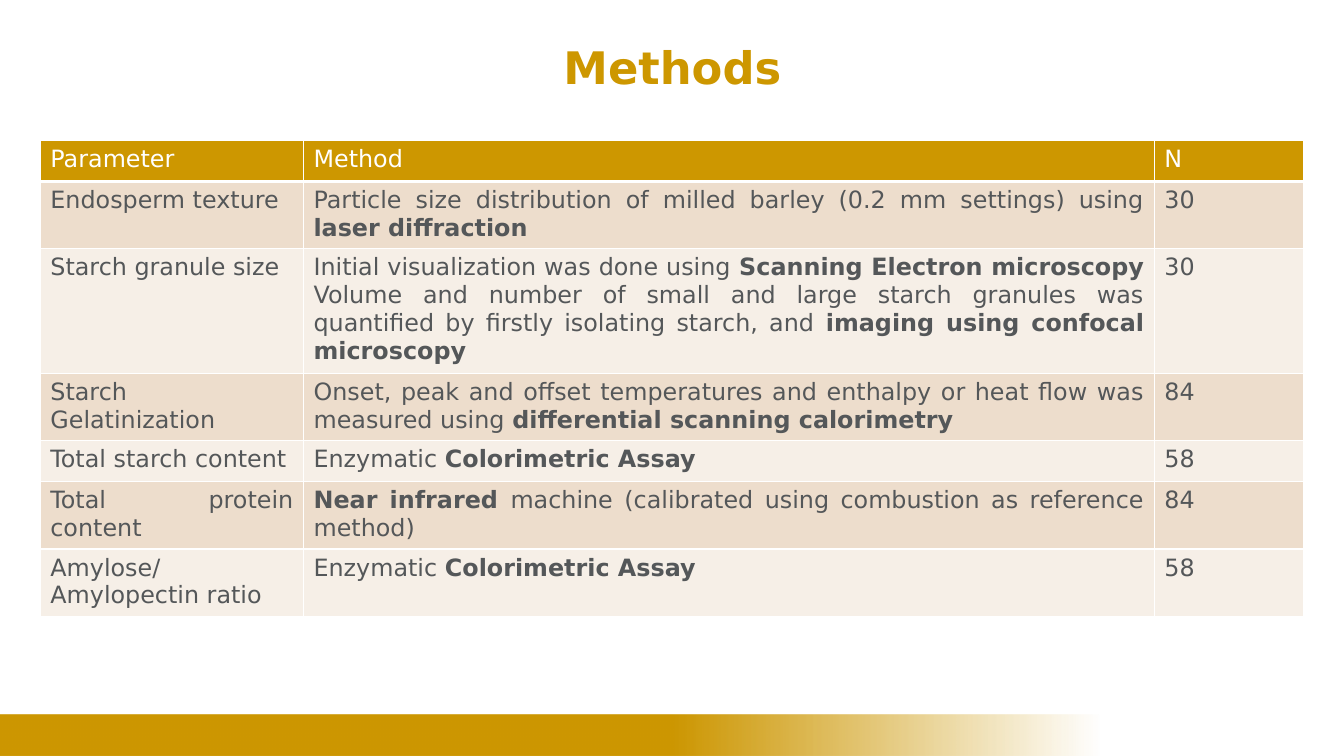
from lxml.etree import SubElement
from pptx import Presentation
from pptx.dml.color import RGBColor
from pptx.enum.shapes import MSO_SHAPE
from pptx.enum.text import MSO_ANCHOR, PP_ALIGN
from pptx.oxml.ns import qn
from pptx.util import Inches, Pt

GOLD = RGBColor(0xCD, 0x97, 0x00)
WHITE = RGBColor(0xFF, 0xFF, 0xFF)
GREY = RGBColor(0x54, 0x57, 0x59)
SAND = RGBColor(0xED, 0xDD, 0xCC)
CREAM = RGBColor(0xF6, 0xEF, 0xE7)
FONT = "DejaVu Sans"

COLUMN_WIDTHS = (2.61, 8.44, 1.48)
ROW_HEIGHT = 0.41
# Asterisks enclose bold words
METHODS = [
    ("Parameter", "Method", "N"),
    ("Endosperm texture",
     "Particle size distribution of milled barley (0.2 mm settings) using "
     "*laser diffraction*", "30"),
    ("Starch granule size",
     "Initial visualization was done using *Scanning Electron microscopy *"
     "Volume and number of small and large starch granules was quantified by "
     "firstly isolating starch, and *imaging using confocal microscopy*", "30"),
    ("Starch Gelatinization",
     "Onset, peak and offset temperatures and enthalpy or heat flow was "
     "measured using *differential scanning calorimetry*", "84"),
    ("Total starch content", "Enzymatic *Colorimetric Assay*", "58"),
    ("Total protein content",
     "*Near infrared *machine (calibrated using combustion as reference method)",
     "84"),
    ("Amylose/Amylopectin ratio", "Enzymatic *Colorimetric Assay*", "58"),
]


def write_text(frame, text, size=17, color=GREY, align=PP_ALIGN.JUSTIFY,
               line_spacing=None):
    """Write one paragraph; words between asterisks are bold."""
    paragraph = frame.paragraphs[0]
    paragraph.alignment = align
    paragraph.line_spacing = line_spacing
    for index, part in enumerate(text.split("*")):
        if part:
            run = paragraph.add_run()
            run.text = part
            run.font.name = FONT
            run.font.size = Pt(size)
            run.font.bold = index % 2 == 1
            run.font.color.rgb = color


def set_borders(cell, bottom_width):
    properties = cell._tc.get_or_add_tcPr()
    widths = {"a:lnL": 1, "a:lnR": 1, "a:lnT": 1, "a:lnB": bottom_width}
    for position, (side, width) in enumerate(widths.items()):
        border = SubElement(properties, qn(side), w=str(Pt(width)))
        fill = SubElement(border, qn("a:solidFill"))
        SubElement(fill, qn("a:srgbClr"), val=str(WHITE))
        properties.insert(position, border)  # borders precede the fill


def add_footer_band(slide, left, top, width, height):
    band = slide.shapes.add_shape(MSO_SHAPE.RECTANGLE, Inches(left), Inches(top),
                                  Inches(width), Inches(height))
    band.shadow.inherit = False
    band.line.fill.background()
    band.fill.gradient()
    band.fill.gradient_angle = 0
    solid, faded = band.fill.gradient_stops
    for stop, position in ((solid, 0.61), (faded, 1)):
        stop.position = position
        stop.color.rgb = GOLD
    # Fade to fully transparent on the right
    faded_color = band._element.spPr.findall(".//" + qn("a:srgbClr"))[-1]
    SubElement(faded_color, qn("a:alpha"), val="0")


def add_title(slide, left, top, width, height):
    title = slide.shapes.add_textbox(Inches(left), Inches(top),
                                     Inches(width), Inches(height))
    title.text_frame.word_wrap = True
    title.text_frame.vertical_anchor = MSO_ANCHOR.TOP
    write_text(title.text_frame, "*Methods*", size=32, color=GOLD,
               align=PP_ALIGN.CENTER, line_spacing=0.9)


def add_methods_table(slide, left, top, width, height):
    holder = slide.shapes.add_table(len(METHODS), len(COLUMN_WIDTHS), Inches(left),
                                    Inches(top), Inches(width), Inches(height))
    table = holder.table
    for column, share in zip(table.columns, COLUMN_WIDTHS):
        column.width = Inches(width * share / sum(COLUMN_WIDTHS))
    for row_number, (row, texts) in enumerate(zip(table.rows, METHODS)):
        row.height = Inches(ROW_HEIGHT)
        is_header = row_number == 0
        row_fill = GOLD if is_header else SAND if row_number % 2 else CREAM
        for cell, text in zip(row.cells, texts):
            cell.fill.solid()
            cell.fill.fore_color.rgb = row_fill
            set_borders(cell, bottom_width=3 if is_header else 1)
            write_text(cell.text_frame, text, color=WHITE if is_header else GREY)
    holder.height = Inches(height)  # rows grow with their text


def main():
    presentation = Presentation()
    presentation.slide_width = Inches(13.33)
    presentation.slide_height = Inches(7.5)
    slide = presentation.slides.add_slide(presentation.slide_layouts[6])
    add_footer_band(slide, 0, 7.09, 10.9, 0.41)
    add_title(slide, 0.92, 0.4, 11.5, 0.85)
    add_methods_table(slide, 0.4, 1.39, 12.53, 4.71)
    presentation.save("out.pptx")


if __name__ == "__main__":
    main()
